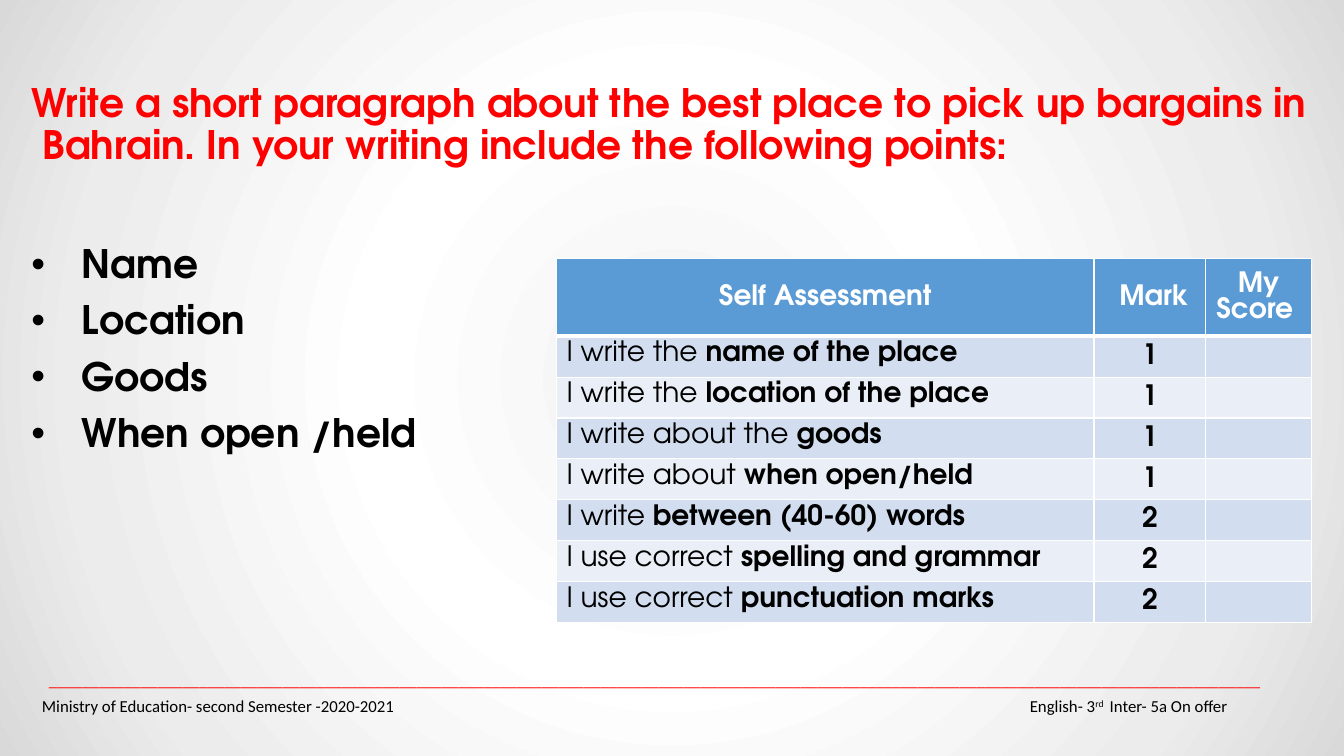
import pptx
import pptx.dml.color
import pptx.enum.text
import pptx.oxml
import pptx.oxml.ns
import pptx.util
from lxml import etree

Pt = pptx.util.Pt
RGBColor = pptx.dml.color.RGBColor
ALIGN = pptx.enum.text.PP_ALIGN
ANCHOR = pptx.enum.text.MSO_ANCHOR
qn = pptx.oxml.ns.qn

RED = RGBColor(0xFF, 0x00, 0x00)
BLACK = RGBColor(0x00, 0x00, 0x00)
WHITE = RGBColor(0xFF, 0xFF, 0xFF)
HEADER_BLUE = RGBColor(0x5B, 0x9B, 0xD5)
BANDS = [RGBColor(0xD2, 0xDE, 0xEF), RGBColor(0xEA, 0xEF, 0xF7)]
BACKGROUND_STOPS = [
    (0, RGBColor(0xF2, 0xF2, 0xF2)),
    (39, WHITE),
    (78, RGBColor(0xEC, 0xEC, 0xEC)),
    (100, RGBColor(0xD9, 0xD9, 0xD9)),
]


def add_text(p, text, size=20, color=BLACK, bold=False, font="TeX Gyre Adventor", baseline=0):
    r = p.add_run()
    r.text = text
    r.font.size = Pt(size)
    r.font.name = font
    r.font.bold = bold
    r.font.color.rgb = color
    if baseline:
        r.font._element.set("baseline", str(baseline * 1000))


def add_box(left, top, width, height):
    tf = slide.shapes.add_textbox(Pt(left), Pt(top), Pt(width), Pt(height)).text_frame
    tf.word_wrap = True
    return tf


prs = pptx.Presentation()
prs.slide_width = Pt(960)
prs.slide_height = Pt(540)
slide = prs.slides.add_slide(prs.slide_layouts[6])

fill = slide.background.fill
fill.gradient()
grad = slide.background._cSld.find(".//" + qn("a:gradFill"))
for child in list(grad):
    grad.remove(child)
stops = etree.SubElement(grad, qn("a:gsLst"))
for position, color in BACKGROUND_STOPS:
    stop = etree.SubElement(stops, qn("a:gs"), pos=str(position * 1000))
    etree.SubElement(stop, qn("a:srgbClr"), val=str(color))
shade = etree.SubElement(grad, qn("a:path"), {"path": "circle"})
etree.SubElement(shade, qn("a:fillToRect"), l="50000", t="50000", r="50000", b="50000")

p = add_box(15.4, 56.2, 932, 70).paragraphs[0]
p.line_spacing = 0.9
add_text(p, "Write a short paragraph about the best place to pick up bargains in", size=28, color=RED, bold=True)
p.add_line_break()
add_text(p, " Bahrain. In your writing include the following points:", size=28, color=RED, bold=True)

tf = add_box(15.4, 171.2, 370, 165)
for i, point in enumerate(["Name", "Location", "Goods", "When open /held"]):
    p = tf.add_paragraph() if i else tf.paragraphs[0]
    p.line_spacing = 0.9
    p.space_before = Pt(10 if i else 0)
    pPr = p._p.get_or_add_pPr()
    pPr.set("marL", str(Pt(36)))
    pPr.set("indent", str(-Pt(36)))
    etree.SubElement(pPr, qn("a:buFont"), typeface="Arial")
    etree.SubElement(pPr, qn("a:buChar"), char="•")
    add_text(p, point, size=28, bold=True)

headings = [" Self Assessment ", "Mark ", "My Score "]
criteria = [
    ("I write the ", "name of the place", "1"),
    ("I write the ", "location of the place", "1"),
    ("I write about the ", "goods", "1"),
    ("I write about ", "when open/held", "1"),
    ("I write ", "between (40-60) words", "2"),
    ("I use correct ", "spelling and grammar", "2"),
    ("I use correct ", "punctuation marks", "2"),
]
table = slide.shapes.add_table(len(criteria) + 1, 3, Pt(397.5), Pt(184.8), Pt(539.3), Pt(260)).table
for column, width in zip(table.columns, [384, 79.9, 75.4]):
    column.width = Pt(width)
for i, row in enumerate(table.rows):
    row.height = Pt(29.2 if i else 55.4)
    for j, cell in enumerate(row.cells):
        cell.margin_top = Pt(3.6 if i and j == 0 else 0)
        cell.margin_bottom = 0
        tcPr = cell._tc.get_or_add_tcPr()
        for side in ["lnL", "lnR", "lnT", "lnB"]:
            thick = (i == 0 and side == "lnB") or (i == 1 and side == "lnT")
            ln = etree.SubElement(tcPr, qn("a:" + side), w=str(Pt(3 if thick else 1)))
            solid = etree.SubElement(ln, qn("a:solidFill"))
            etree.SubElement(solid, qn("a:srgbClr"), val=str(WHITE))
        cell.fill.solid()
        cell.fill.fore_color.rgb = BANDS[(i - 1) % 2] if i else HEADER_BLUE
        p = cell.text_frame.paragraphs[0]
        if i == 0 or j == 1:
            cell.vertical_anchor = ANCHOR.MIDDLE
            p.alignment = ALIGN.CENTER
        if i == 0:
            if j == 1:
                p._p.get_or_add_pPr().set("rtl", "1")
            add_text(p, headings[j], color=WHITE, bold=True)
        elif j == 0:
            add_text(p, criteria[i - 1][0])
            add_text(p, criteria[i - 1][1], bold=True)
        elif j == 1:
            add_text(p, criteria[i - 1][2], bold=True)

p = add_box(23, 475, 890.6, 22).paragraphs[0]
p.alignment = ALIGN.CENTER
add_text(p, "_" * 145, size=12, color=RED, font="Calibri")

p = add_box(22.8, 493.3, 400, 22).paragraphs[0]
add_text(p, "Ministry of Education- second Semester -2020-2021", size=12, font="Calibri")
p = add_box(728.5, 493.3, 190, 22).paragraphs[0]
add_text(p, "English- 3", size=12, font="Calibri")
add_text(p, "rd ", size=12, font="Calibri", baseline=30)
add_text(p, " Inter- 5a On offer", size=12, font="Calibri")

prs.save("out.pptx")
